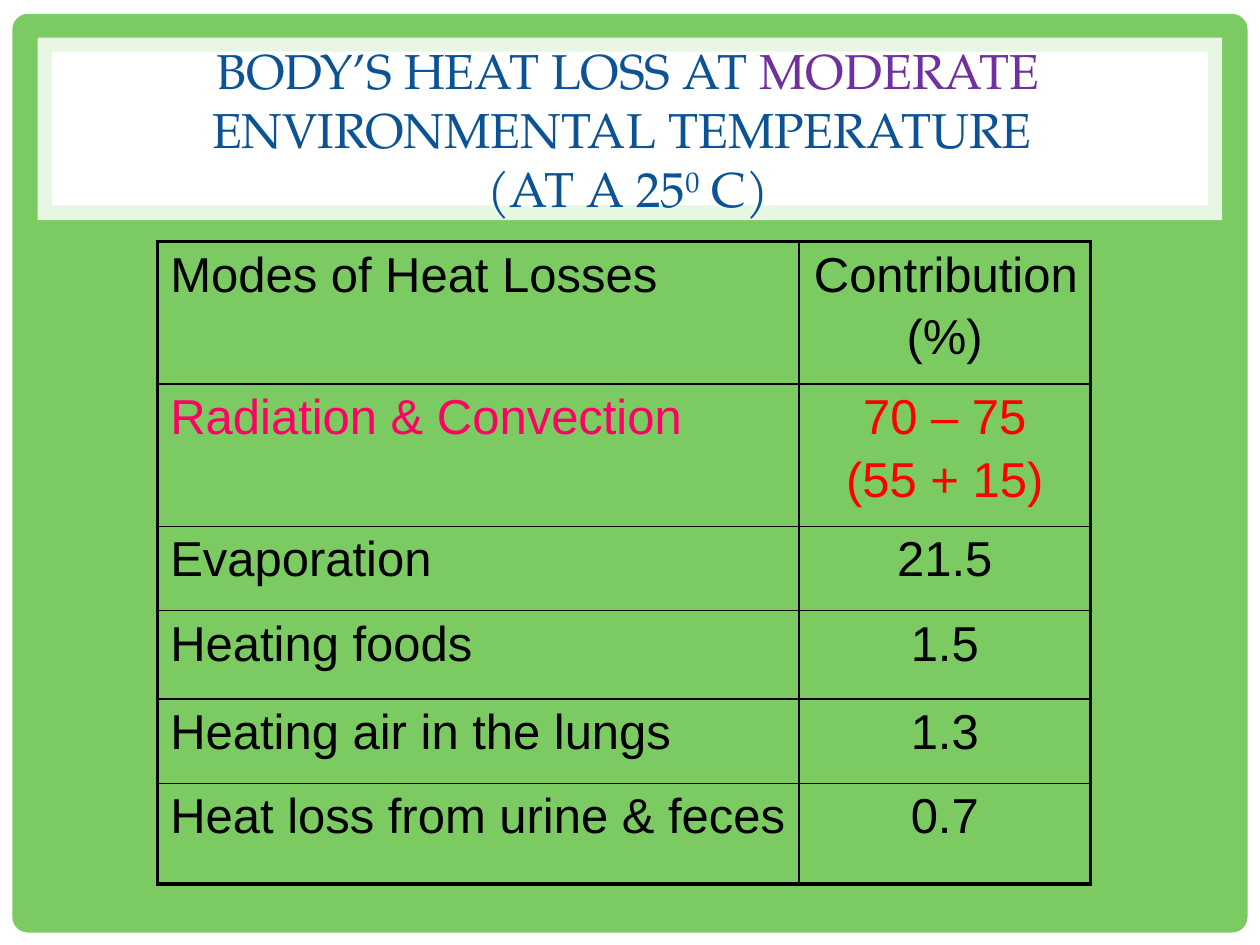
from lxml import etree
from pptx import Presentation
from pptx.dml.color import RGBColor
from pptx.enum.shapes import MSO_SHAPE
from pptx.enum.text import MSO_ANCHOR, PP_ALIGN
from pptx.oxml.ns import qn
from pptx.util import Cm, Pt

RECTANGLE = MSO_SHAPE.RECTANGLE
ROUNDED = MSO_SHAPE.ROUNDED_RECTANGLE
MIDDLE = MSO_ANCHOR.MIDDLE
LEFT, CENTER, RIGHT = PP_ALIGN.LEFT, PP_ALIGN.CENTER, PP_ALIGN.RIGHT

WHITE = RGBColor(0xFF, 0xFF, 0xFF)
BLACK = RGBColor(0x00, 0x00, 0x00)
GREEN = RGBColor(0x7C, 0xCA, 0x62)
BLUE = RGBColor(0x0B, 0x53, 0x94)
PURPLE = RGBColor(0x70, 0x30, 0xA0)
PINK = RGBColor(0xFF, 0x00, 0x66)
RED = RGBColor(0xFF, 0x00, 0x00)

TITLE_FONT = "TeX Gyre Pagella"
TABLE_FONT = "Arial"
THIN, THICK = Pt(1), Pt(2.25)

TITLE_RUNS = [
    ("BODY’S HEAT LOSS AT ", BLUE, 0),
    ("MODERATE", PURPLE, 0),
    (" ENVIRONMENTAL TEMPERATURE \v(AT A 25", BLUE, 0),
    ("0", BLUE, 30),
    (" C)", BLUE, 0),
]
HEAT_LOSSES = [
    ("Modes of Heat Losses", BLACK, [("Contribution", RIGHT), ("(%)", CENTER)], BLACK, 2.87),
    ("Radiation & Convection", PINK, [("70 – 75", CENTER), ("(55 + 15)", CENTER)], RED, 2.87),
    ("Evaporation", BLACK, [("21.5", CENTER)], BLACK, 1.7),
    ("Heating foods", BLACK, [("1.5", CENTER)], BLACK, 1.78),
    ("Heating air in the lungs", BLACK, [("1.3", CENTER)], BLACK, 1.7),
    ("Heat loss from urine & feces", BLACK, [("0.7", CENTER)], BLACK, 2.03),
]
COLUMN_WIDTHS = [12.93, 5.87]


def write_text(paragraph, text, *, font, color, size=28, align=LEFT, raised=0):
    paragraph.alignment = align
    for index, line in enumerate(text.split("\v")):
        if index:
            paragraph.add_line_break()
        run = paragraph.add_run()
        run.text = line
        run.font.name = font
        run.font.size = Pt(size)
        run.font.bold = False
        run.font.color.rgb = color
        if raised:
            run.font._element.set("baseline", str(raised * 1000))


def add_panel(slide, preset, left, top, width, height, color, opacity=100):
    panel = slide.shapes.add_shape(preset, Cm(left), Cm(top), Cm(width), Cm(height))
    panel.shadow.inherit = False
    panel.line.fill.background()
    panel.fill.solid()
    panel.fill.fore_color.rgb = color
    if opacity < 100:
        tint = panel._element.spPr.find(qn("a:solidFill"))[0]
        etree.SubElement(tint, qn("a:alpha")).set("val", str(opacity * 1000))
    return panel


def add_backdrop(slide, width, height):
    slide.background.fill.solid()
    slide.background.fill.fore_color.rgb = GREEN
    add_panel(slide, RECTANGLE, 0, 0, width, height, WHITE)
    frame = add_panel(slide, ROUNDED, 0.25, 0.28, width - 0.5, height - 0.53, GREEN)
    frame.adjustments[0] = 0.017


def add_title(slide, left, top, width, height):
    add_panel(slide, RECTANGLE, left, top, width, height, WHITE, opacity=83)
    add_panel(slide, RECTANGLE, left + 0.29, top + 0.28, width - 0.58, height - 0.58, WHITE)
    title = slide.shapes.add_textbox(
        Cm(left + 0.43), Cm(top + 0.38), Cm(width - 0.94), Cm(height - 0.78)
    ).text_frame
    title.word_wrap = True
    title.vertical_anchor = MIDDLE
    heading = title.paragraphs[0]
    heading.line_spacing = Pt(33.7)
    for text, color, raised in TITLE_RUNS:
        write_text(heading, text, font=TITLE_FONT, color=color, align=CENTER, raised=raised)


def set_borders(cell, widths):
    properties = cell._tc.get_or_add_tcPr()
    for index, (side, width) in enumerate(widths.items()):
        border = etree.Element(qn(f"a:ln{side}"), w=str(width))
        fill = etree.SubElement(border, qn("a:solidFill"))
        etree.SubElement(fill, qn("a:srgbClr")).set("val", str(BLACK))
        properties.insert(index, border)


def fill_cell(cell, lines, color):
    cell.fill.background()
    for index, (text, align) in enumerate(lines):
        frame = cell.text_frame
        paragraph = frame.add_paragraph() if index else frame.paragraphs[0]
        if index:
            paragraph.space_before = Pt(4.5)
        write_text(paragraph, text, font=TABLE_FONT, color=color, align=align)


def add_heat_loss_table(slide, left, top):
    heights = [loss[-1] for loss in HEAT_LOSSES]
    last = len(HEAT_LOSSES) - 1
    table = slide.shapes.add_table(
        len(HEAT_LOSSES), 2, Cm(left), Cm(top), Cm(sum(COLUMN_WIDTHS)), Cm(sum(heights))
    ).table
    table.first_row = False
    table.horz_banding = False
    for column, width in zip(table.columns, COLUMN_WIDTHS):
        column.width = Cm(width)
    for row, (mode, mode_color, shares, share_color, height) in enumerate(HEAT_LOSSES):
        table.rows[row].height = Cm(height)
        fill_cell(table.cell(row, 0), [(mode, LEFT)], mode_color)
        fill_cell(table.cell(row, 1), shares, share_color)
        for column in range(2):
            set_borders(table.cell(row, column), {
                "L": THIN if column else THICK,
                "R": THICK if column else THIN,
                "T": THIN if row else THICK,
                "B": THICK if row == last else THIN,
            })


def main():
    presentation = Presentation()
    presentation.slide_width = Cm(25.4)
    presentation.slide_height = Cm(19.05)
    slide = presentation.slides.add_slide(presentation.slide_layouts[6])
    add_backdrop(slide, 25.4, 19.05)
    add_title(slide, 0.76, 0.76, 23.88, 3.68)
    add_heat_loss_table(slide, 3.18, 4.87)
    presentation.save("out.pptx")


if __name__ == "__main__":
    main()
